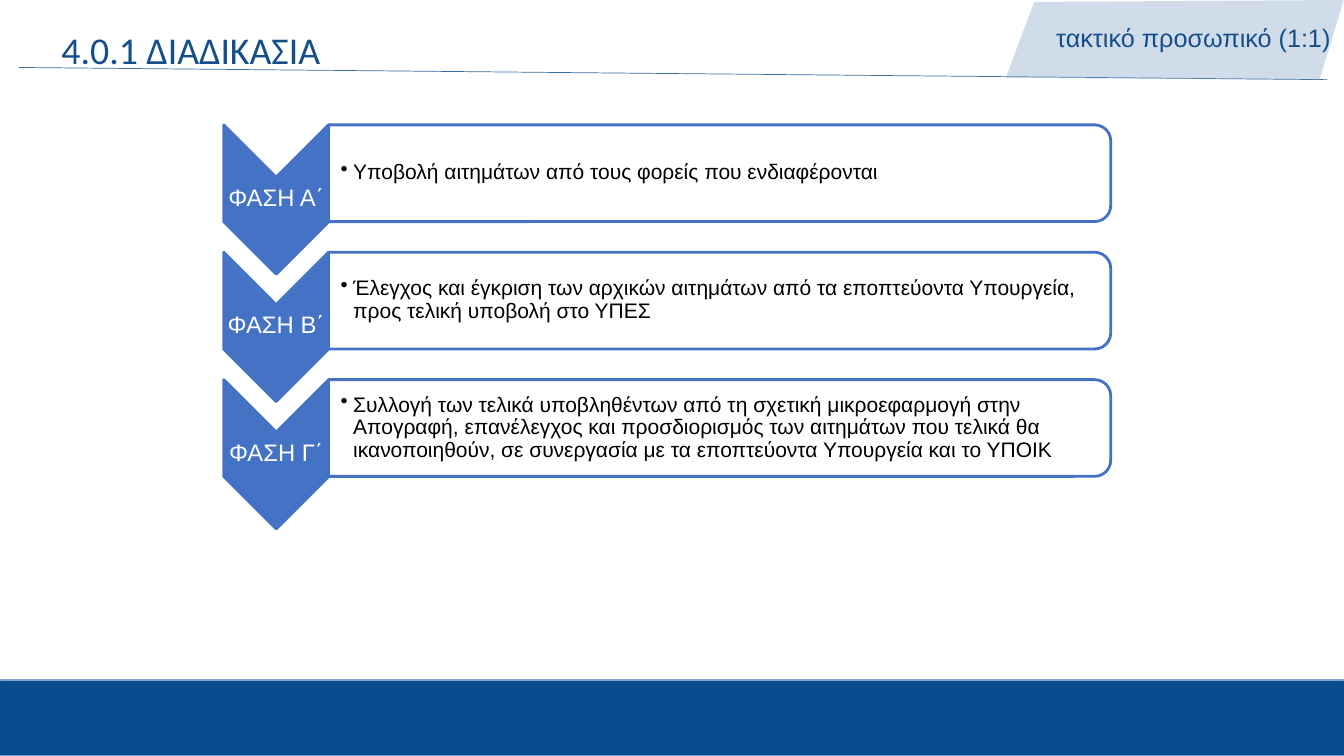
"""Build the slide that shows the three phases of the staffing procedure."""
from lxml.etree import SubElement
from pptx import Presentation
from pptx.dml.color import RGBColor
from pptx.enum.shapes import MSO_CONNECTOR, MSO_SHAPE
from pptx.enum.text import MSO_ANCHOR, MSO_AUTO_SIZE, PP_ALIGN
from pptx.oxml.ns import qn
from pptx.util import Pt

TITLE = "4.0.1 ΔΙΑΔΙΚΑΣΙΑ"
TAG = "τακτικό προσωπικό (1:1)"
PHASES = [
    ("ΦΑΣΗ Α΄", "Υποβολή αιτημάτων από τους φορείς που ενδιαφέρονται"),
    ("ΦΑΣΗ Β΄", "Έλεγχος και έγκριση των αρχικών αιτημάτων από τα εποπτεύοντα "
                "Υπουργεία, προς τελική υποβολή στο ΥΠΕΣ"),
    ("ΦΑΣΗ Γ΄", "Συλλογή των τελικά υποβληθέντων από τη σχετική μικροεφαρμογή στην "
                "Απογραφή, επανέλεγχος και προσδιορισμός των αιτημάτων που τελικά θα "
                "ικανοποιηθούν, σε συνεργασία με τα εποπτεύοντα Υπουργεία και το ΥΠΟΙΚ"),
]
TAG_OUTLINE = [(942.5, 57), (718.5, 55.5), (738.7, 1.4), (959.8, 0)]

NAVY, INK, BLUE, WHITE, BLACK = "084C8D", "144F89", "4472C4", "FFFFFF", "000000"
RULE, PALE, TAG_FILL, FOOTER_EDGE = "376A9F", "86A3CD", "87A4CB", "6F9DD0"

PHASE_TOP, PHASE_STEP = 89.2, 91
CHEVRON_LEFT, CHEVRON_WIDTH, CHEVRON_HEIGHT = 159.8, 74.9, 106.6
PANEL_LEFT, PANEL_WIDTH, PANEL_HEIGHT = 234.7, 558.7, 69.1
LABEL_HEIGHT, LABEL_DROP = 31.7, 36.8
BODY_WIDTH, BODY_HEIGHT, BODY_DROP = 555.8, 62.6, 3.2
BULLET_INDENT = 9


def color(value):
    return RGBColor.from_string(value)


def paint(shape, fill, line=None, weight=1, opacity=100):
    shape.shadow.inherit = False
    shape.fill.solid()
    shape.fill.fore_color.rgb = color(fill)
    if opacity < 100:
        tone = shape.fill._xPr.find(qn("a:solidFill"))[0]
        SubElement(tone, qn("a:alpha"), val=str(opacity * 1000))
    if line:
        shape.line.color.rgb = color(line)
        shape.line.width = Pt(weight)
    else:
        shape.line.fill.background()


def add_block(slide, kind, left, top, width, height, quarter_turn=False):
    """Place a shape so that it fills the given box as seen on the slide."""
    if quarter_turn:
        shift = (width - height) / 2
        left, top, width, height = left + shift, top - shift, height, width
    shape = slide.shapes.add_shape(kind, Pt(left), Pt(top), Pt(width), Pt(height))
    shape.rotation = 90 if quarter_turn else 0
    return shape


def add_text(slide, text, box, size, ink, font="Arial", insets=(7.2, 3.6, 7.2, 3.6),
             spacing=1.0, anchor=MSO_ANCHOR.TOP, align=PP_ALIGN.LEFT, grow=False):
    shape = slide.shapes.add_textbox(*[Pt(value) for value in box])
    frame = shape.text_frame
    frame.word_wrap = True
    frame.auto_size = MSO_AUTO_SIZE.SHAPE_TO_FIT_TEXT if grow else MSO_AUTO_SIZE.NONE
    frame.vertical_anchor = anchor
    (frame.margin_left, frame.margin_top,
     frame.margin_right, frame.margin_bottom) = [Pt(value) for value in insets]
    paragraph = frame.paragraphs[0]
    paragraph.text = text
    paragraph.alignment = align
    paragraph.line_spacing = spacing
    paragraph.font.name = font
    paragraph.font.size = Pt(size)
    paragraph.font.color.rgb = color(ink)
    return paragraph


def add_bullet(paragraph):
    properties = paragraph._p.get_or_add_pPr()
    properties.set("marL", str(Pt(BULLET_INDENT)))
    properties.set("indent", str(-Pt(BULLET_INDENT)))
    bullet = SubElement(properties, qn("a:buChar"), char="•")
    properties.remove(bullet)
    properties.insert_element_before(bullet, "a:tabLst", "a:defRPr", "a:extLst")


def add_frame(slide):
    footer = add_block(slide, MSO_SHAPE.RECTANGLE, -1.4, 485.3, 962.6, 54.7)
    paint(footer, NAVY, FOOTER_EDGE)
    stripe = add_block(slide, MSO_SHAPE.RECTANGLE, 0.7, 485.3, 959, 0.7)
    paint(stripe, PALE, PALE)

    rule = slide.shapes.add_connector(
        MSO_CONNECTOR.STRAIGHT, Pt(13.7), Pt(48.2), Pt(948.2), Pt(56.9))
    rule.line.color.rgb = color(RULE)
    rule.line.width = Pt(0.5)
    SubElement(rule._element.spPr, qn("a:effectLst"))

    add_text(slide, TITLE, (40.3, 21.6, 919.7, 33.1), 27, INK, "Calibri",
             insets=(3.6,) * 4, spacing=0.8, grow=True)

    corners = [(Pt(x), Pt(y)) for x, y in TAG_OUTLINE]
    builder = slide.shapes.build_freeform(*corners[0])
    builder.add_line_segments(corners[1:], close=True)
    paint(builder.convert_to_shape(), TAG_FILL, opacity=38)
    add_text(slide, TAG, (747.4, 12.2, 212.6, 29), 18, INK, grow=True)


def add_phase(slide, top, label, body):
    chevron = add_block(slide, MSO_SHAPE.CHEVRON, CHEVRON_LEFT, top,
                        CHEVRON_WIDTH, CHEVRON_HEIGHT, quarter_turn=True)
    chevron.adjustments[0] = 0.5
    paint(chevron, BLUE, BLUE, 2)
    add_text(slide, label, (CHEVRON_LEFT, top + LABEL_DROP, CHEVRON_WIDTH, LABEL_HEIGHT),
             17, WHITE, insets=(0.7,) * 4, spacing=0.9,
             anchor=MSO_ANCHOR.MIDDLE, align=PP_ALIGN.CENTER)

    panel = add_block(slide, MSO_SHAPE.ROUND_2_SAME_RECTANGLE, PANEL_LEFT, top,
                      PANEL_WIDTH, PANEL_HEIGHT, quarter_turn=True)
    paint(panel, WHITE, BLUE, 2, opacity=90)
    paragraph = add_text(
        slide, body, (PANEL_LEFT, top + BODY_DROP, BODY_WIDTH, BODY_HEIGHT), 15, BLACK,
        insets=(8.6, 0.7, 0.7, 0.7), spacing=0.9, anchor=MSO_ANCHOR.MIDDLE)
    add_bullet(paragraph)


def main():
    presentation = Presentation()
    presentation.slide_width, presentation.slide_height = Pt(960), Pt(540)
    slide = presentation.slides.add_slide(presentation.slide_layouts[6])
    add_frame(slide)
    for index, (label, body) in enumerate(PHASES):
        add_phase(slide, PHASE_TOP + index * PHASE_STEP, label, body)
    presentation.save("out.pptx")


if __name__ == "__main__":
    main()
